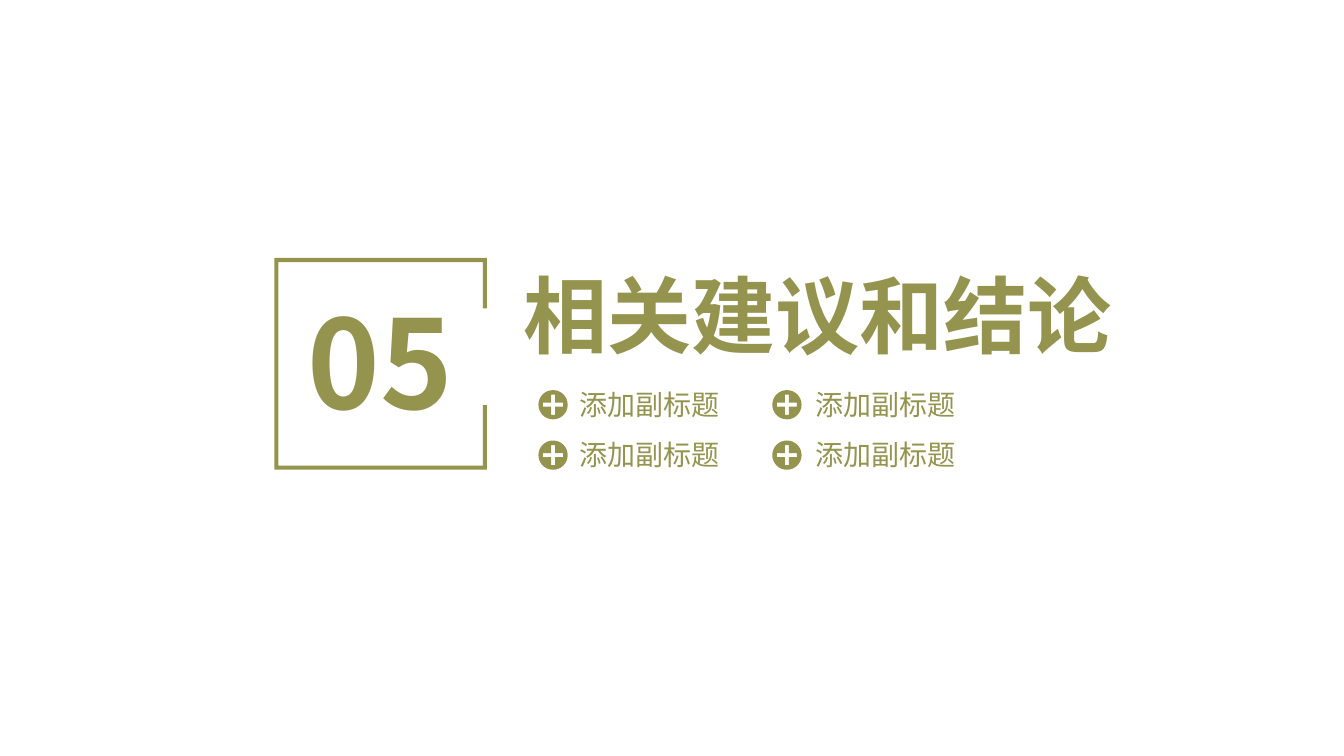
from itertools import pairwise

from lxml import etree
from pptx import Presentation
from pptx.dml.color import RGBColor
from pptx.enum.text import MSO_AUTO_SIZE, PP_ALIGN
from pptx.oxml.ns import qn
from pptx.util import Inches, Pt

OLIVE = RGBColor(0x95, 0x94, 0x4F)
FONT = "Noto Sans CJK SC"
LEFT, CENTER = PP_ALIGN.LEFT, PP_ALIGN.CENTER
FIT_SHAPE = MSO_AUTO_SIZE.SHAPE_TO_FIT_TEXT

COLUMNS = ((5.34, 5.65), (7.66, 7.99))  # badge left, subtitle left
ROWS = ((3.87, 3.8), (4.37, 4.29))  # badge top, subtitle top
SUBTITLE_WIDTHS = ((1.62, 1.76), (2.96, 3.04))
BADGE_RADIUS = 0.145
ARC_PULL = 0.5523  # handle length of a quarter circle, in radii


def add_text(page, text, left, top, width, height, size,
             bold=False, align=LEFT, inset=None):
    box = page.shapes.add_textbox(
        Inches(left), Inches(top), Inches(width), Inches(height))
    frame = box.text_frame
    frame.word_wrap = True
    frame.auto_size = FIT_SHAPE
    if inset is not None:
        for side in ("left", "top", "right", "bottom"):
            setattr(frame, f"margin_{side}", Inches(inset))
    para = frame.paragraphs[0]
    para.alignment = align
    span = para.add_run()
    span.text = text
    for name, value in {"name": FONT, "size": Pt(size), "bold": bold}.items():
        setattr(span.font, name, value)
    span.font.color.rgb = OLIVE
    east_asian = etree.SubElement(span.font._element, qn("a:ea"))
    east_asian.set("typeface", FONT)


def add_outline(page, *contours):
    """Fill one shape made of closed contours; an inner contour is a hole."""
    first, *holes = [[(Inches(x), Inches(y)) for x, y in contour]
                     for contour in contours]
    builder = page.shapes.build_freeform(*first[0])
    builder.add_line_segments(first[1:], close=True)
    for hole in holes:
        builder.move_to(*hole[0])
        builder.add_line_segments(hole[1:], close=True)
    shape = builder.convert_to_shape()
    shape.shadow.inherit = False
    shape.fill.solid()
    shape.fill.fore_color.rgb = OLIVE
    shape.line.fill.background()
    return shape


def round_diamond(shape):
    """Turn the four sides of the first contour into quarter circles."""
    radius = Inches(BADGE_RADIUS)
    turns = [(0, -1), (1, 0), (0, 1), (-1, 0), (0, -1)]
    sides = list(shape._element.iter(qn("a:lnTo")))[:4]
    for side, ((ax, ay), (bx, by)) in zip(sides, pairwise(turns)):
        handles = ((ax + ARC_PULL * bx, ay + ARC_PULL * by),
                   (bx + ARC_PULL * ax, by + ARC_PULL * ay))
        curve = etree.Element(qn("a:cubicBezTo"))
        for x, y in (*handles, (bx, by)):
            point = etree.SubElement(curve, qn("a:pt"))
            point.set("x", str(round(radius * (1 + x))))
            point.set("y", str(round(radius * (1 + y))))
        side.getparent().replace(side, curve)


def add_plus_badge(page, left, top):
    radius = BADGE_RADIUS
    x, y = left + radius, top + radius
    diamond = [(x, y - radius), (x + radius, y), (x, y + radius),
               (x - radius, y), (x, y - radius)]
    arm, half = 0.1, 0.02
    cross = [(-half, arm), (half, arm), (half, half), (arm, half),
             (arm, -half), (half, -half), (half, -arm), (-half, -arm),
             (-half, -half), (-arm, -half), (-arm, half), (-half, half)]
    round_diamond(add_outline(
        page, diamond, [(x + dx, y + dy) for dx, dy in cross]))


def add_open_frame(page):
    """Draw the square frame with a gap in its right side."""
    left, top, right, bottom = 2.72, 2.56, 4.83, 4.66
    gap_top, gap_bottom, bar = 3.06, 4.02, 0.04
    inner_right = right - bar
    add_outline(page, [
        (left, top), (right, top), (right, gap_top), (inner_right, gap_top),
        (inner_right, top + bar), (left + bar, top + bar),
        (left + bar, bottom - bar), (inner_right, bottom - bar),
        (inner_right, gap_bottom), (right, gap_bottom),
        (right, bottom), (left, bottom)])


def main():
    deck = Presentation()
    deck.slide_width, deck.slide_height = Inches(13.33), Inches(7.5)
    page = deck.slides.add_slide(deck.slide_layouts[6])

    add_open_frame(page)
    add_text(page, "05", 2.98, 2.84, 1.58, 1.48, 88,
             bold=True, align=CENTER, inset=0)
    add_text(page, "相关建议和结论", 5.19, 2.61, 7.67, 1.01, 60,
             bold=True, inset=0)
    for (badge_top, text_top), widths in zip(ROWS, SUBTITLE_WIDTHS):
        for (badge_left, text_left), width in zip(COLUMNS, widths):
            add_plus_badge(page, badge_left, badge_top)
            add_text(page, "添加副标题", text_left, text_top, width, 0.44, 20)

    deck.save("out.pptx")


if __name__ == "__main__":
    main()
